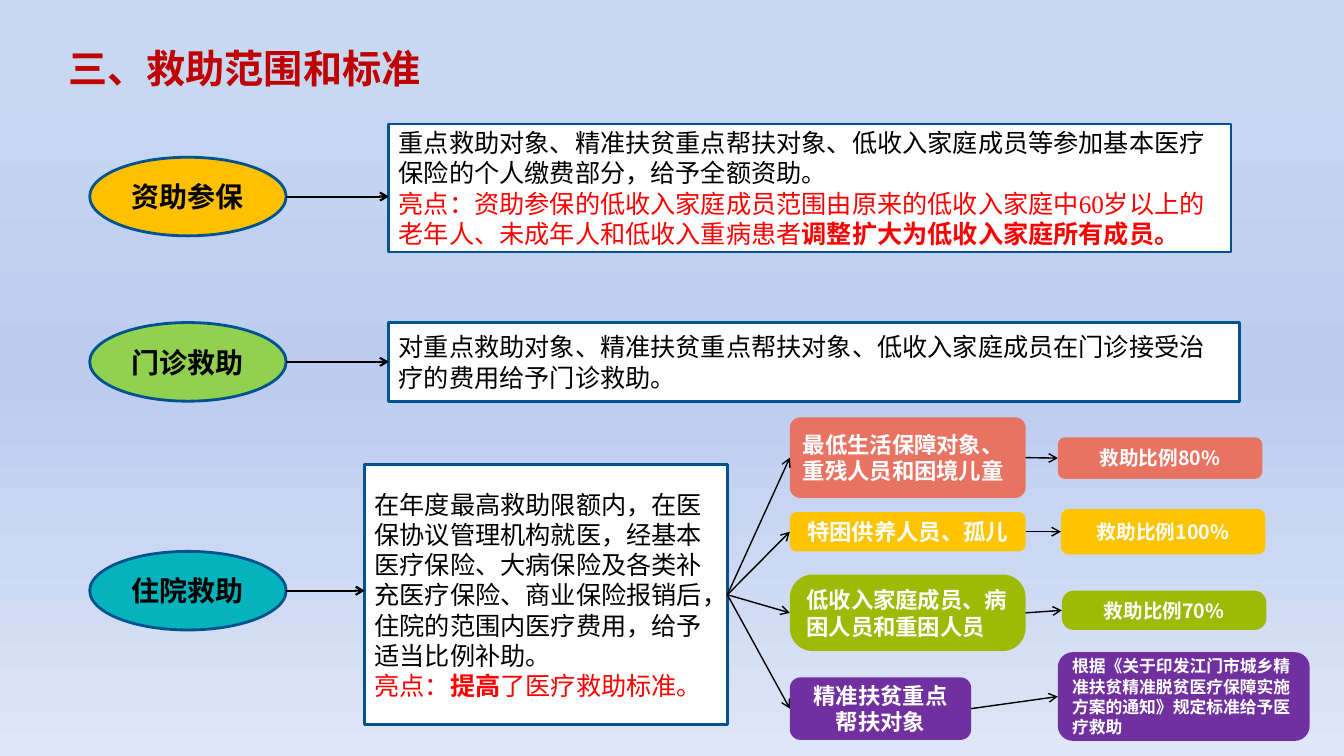
from lxml import etree
from pptx import Presentation
from pptx.dml.color import RGBColor
from pptx.enum import shapes, text
from pptx.oxml import ns
from pptx.util import Inches, Pt

# Content
FONT = "Noto Sans CJK SC"
BLACK, WHITE, RED, BLUE = "000000", "FFFFFF", "FF0000", "00538E"
BACKGROUND = [(0, "C6D9F1"), (8, "C6D9F1"), (50, "BCCCEF"), (100, "DEE6F7")]
TITLE = "三、救助范围和标准"

# Each paragraph is a list of runs: (wording, changes to the format)
# Aid kinds: name, fill, oval top, box (left, top, width, height), paragraphs
AIDS = [
    ("资助参保", "FFC000", 1.56, (3.86, 1.23, 8.36, 1.27), [
        [("重点救助对象、精准扶贫重点帮扶对象、低收入家庭成员等参加基本医疗保险的个人缴费部分，给予全额资助。", {})],
        [("亮点：资助参保的低收入家庭成员范围由原来的低收入家庭中", {"color": RED}),
         ("60", {"color": RED, "name": "Times New Roman"}),
         ("岁以上的老年人、未成年人和低收入重病患者", {"color": RED}),
         ("调整扩大为低收入家庭所有成员。", {"color": RED, "bold": True})]]),
    ("门诊救助", "92D050", 3.2, (3.86, 3.2, 8.44, 0.78), [
        [("对重点救助对象、精准扶贫重点帮扶对象、低收入家庭成员在门诊接受治疗的费用给予门诊救助。", {})]]),
    ("住院救助", "04B3BC", 5.47, (3.62, 4.61, 3.6, 2.58), [
        [("在年度最高救助限额内，在医保协议管理机构就医，经基本医疗保险、大病保险及各类补充医疗保险、"
          "商业保险报销后，住院的范围内医疗费用，给予适当比例补助。", {})],
        [("亮点：", {"color": RED}), ("提高", {"color": RED, "bold": True}),
         ("了医疗救助标准。", {"color": RED})]]),
]
# Inpatient groups: fill, group box, corner, lines, centred, then the same for its standard
GROUPS = [
    ("E97362", (7.84, 4.14, 2.34, 0.8), 0.13, ["最低生活保障对象、重残人员和困境儿童"], False,
     (10.5, 4.34, 2.03, 0.41), 0.17, "救助比例80%", True, 14),
    ("FFC400", (7.84, 5.08, 2.34, 0.39), 0.17, ["特困供养人员、孤儿"], True,
     (10.53, 5.05, 2.03, 0.45), 0.17, "救助比例100%", True, 14),
    ("9CBA06", (7.84, 5.7, 2.34, 0.76), 0.3, ["低收入家庭成员、病困人员和重困人员"], False,
     (10.54, 5.86, 2.03, 0.39), 0.3, "救助比例70%", True, 14),
    ("7030A0", (7.84, 6.72, 1.8, 0.62), 0.17, ["精准扶贫重点", "帮扶对象"], True,
     (10.5, 6.47, 2.5, 0.88), 0.17,
     "根据《关于印发江门市城乡精准扶贫精准脱贫医疗保障实施方案的通知》规定标准给予医疗救助", False, 12),
]
OVAL_LEFT, OVAL_WIDTH, OVAL_HEIGHT = 0.89, 1.95, 0.78
TOP, LEFT, BOTTOM, RIGHT = range(4)

prs = Presentation()
prs.slide_width, prs.slide_height = Inches(13.34), Inches(7.5)
slide = prs.slides.add_slide(prs.slide_layouts[6])


def rgb(value):
    return RGBColor.from_string(value)


def write(frame, paragraphs, centred=False, **base):
    for number, runs in enumerate(paragraphs):
        paragraph = frame.paragraphs[0] if number == 0 else frame.add_paragraph()
        paragraph.alignment = text.PP_ALIGN.CENTER if centred else text.PP_ALIGN.LEFT
        for wording, changes in runs:
            run = paragraph.add_run()
            run.text = wording
            style = {"name": FONT, "bold": False, **base, **changes}
            run.font.color.rgb = rgb(style.pop("color"))
            for key, value in style.items():
                setattr(run.font, key, value)
            east_asian = etree.SubElement(run.font._element, ns.qn("a:ea"))
            east_asian.set("typeface", FONT)


def add_box(kind, place, fill, paragraphs, outlined=False, corner=None, **style):
    box = slide.shapes.add_shape(kind, *map(Inches, place))
    box.shadow.inherit = False
    box.fill.solid()
    box.fill.fore_color.rgb = rgb(fill)
    if outlined:
        box.line.color.rgb = rgb(BLUE)
        box.line.width = Pt(2)
    else:
        box.line.fill.background()
    if corner is not None:
        box.adjustments[0] = corner
    box.text_frame.word_wrap = True
    box.text_frame.vertical_anchor = text.MSO_ANCHOR.MIDDLE
    write(box.text_frame, paragraphs, **style)
    return box


def add_arrow(start, end, width, source=None, target=None):
    """Draw an arrow and join it to the right side of source, the left side of target."""
    arrow = slide.shapes.add_connector(shapes.MSO_CONNECTOR.STRAIGHT, *map(Inches, start + end))
    if source is not None:
        arrow.begin_connect(source, RIGHT)
    if target is not None:
        arrow.end_connect(target, LEFT)
    arrow.line.color.rgb = rgb(BLACK)
    arrow.line.width = Pt(width)
    etree.SubElement(arrow.line._get_or_add_ln(), ns.qn("a:tailEnd")).set("type", "arrow")
    etree.SubElement(arrow._element.spPr, ns.qn("a:effectLst"))


def side(place, right=False):
    left, top, width, height = place
    return left + width * right, top + height / 2


# Background
background = slide.background.fill
background.gradient()
background.gradient_angle = 270
stops = slide.background._cSld.find(".//" + ns.qn("a:gsLst"))
for stop in list(stops):
    stops.remove(stop)
for percent, color in BACKGROUND:
    stop = etree.SubElement(stops, ns.qn("a:gs"), pos=str(percent * 1000))
    etree.SubElement(stop, ns.qn("a:srgbClr"), val=color)

# Title
title = slide.shapes.add_textbox(*map(Inches, (0.58, 0.39, 3.75, 0.57)))
title.text_frame.word_wrap = False
write(title.text_frame, [[(TITLE, {})]], size=Pt(28), bold=True, color="C00000")

# Kinds of aid, each with its explanation
for name, fill, top, place, paragraphs in AIDS:
    oval = (OVAL_LEFT, top, OVAL_WIDTH, OVAL_HEIGHT)
    add_box(shapes.MSO_SHAPE.OVAL, oval, fill, [[(name, {})]], outlined=True,
            centred=True, size=Pt(20), bold=True, color=BLACK)
    explanation = add_box(shapes.MSO_SHAPE.RECTANGLE, place, WHITE, paragraphs,
                          outlined=True, size=Pt(18), color=BLACK)
    start = side(oval, right=True)
    level = start[1] == side(place)[1]
    add_arrow(start, (place[0], start[1]), 1.5, target=explanation if level else None)

# Inpatient groups and their standards, fed by the last explanation
inpatient, inpatient_place = explanation, place
for (fill, place, corner, lines, centred,
     standard_place, standard_corner, standard, standard_centred, size) in GROUPS:
    group_box = add_box(shapes.MSO_SHAPE.ROUNDED_RECTANGLE, place, fill,
                        [[(line, {})] for line in lines], corner=corner,
                        centred=centred, size=Pt(16), bold=True, color=WHITE)
    standard_box = add_box(shapes.MSO_SHAPE.ROUNDED_RECTANGLE, standard_place, fill,
                           [[(standard, {})]], corner=standard_corner,
                           centred=standard_centred, size=Pt(size), bold=True, color=WHITE)
    add_arrow(side(inpatient_place, right=True), side(place), 1, inpatient, group_box)
    add_arrow(side(place, right=True), side(standard_place), 1, group_box, standard_box)

prs.save("out.pptx")
